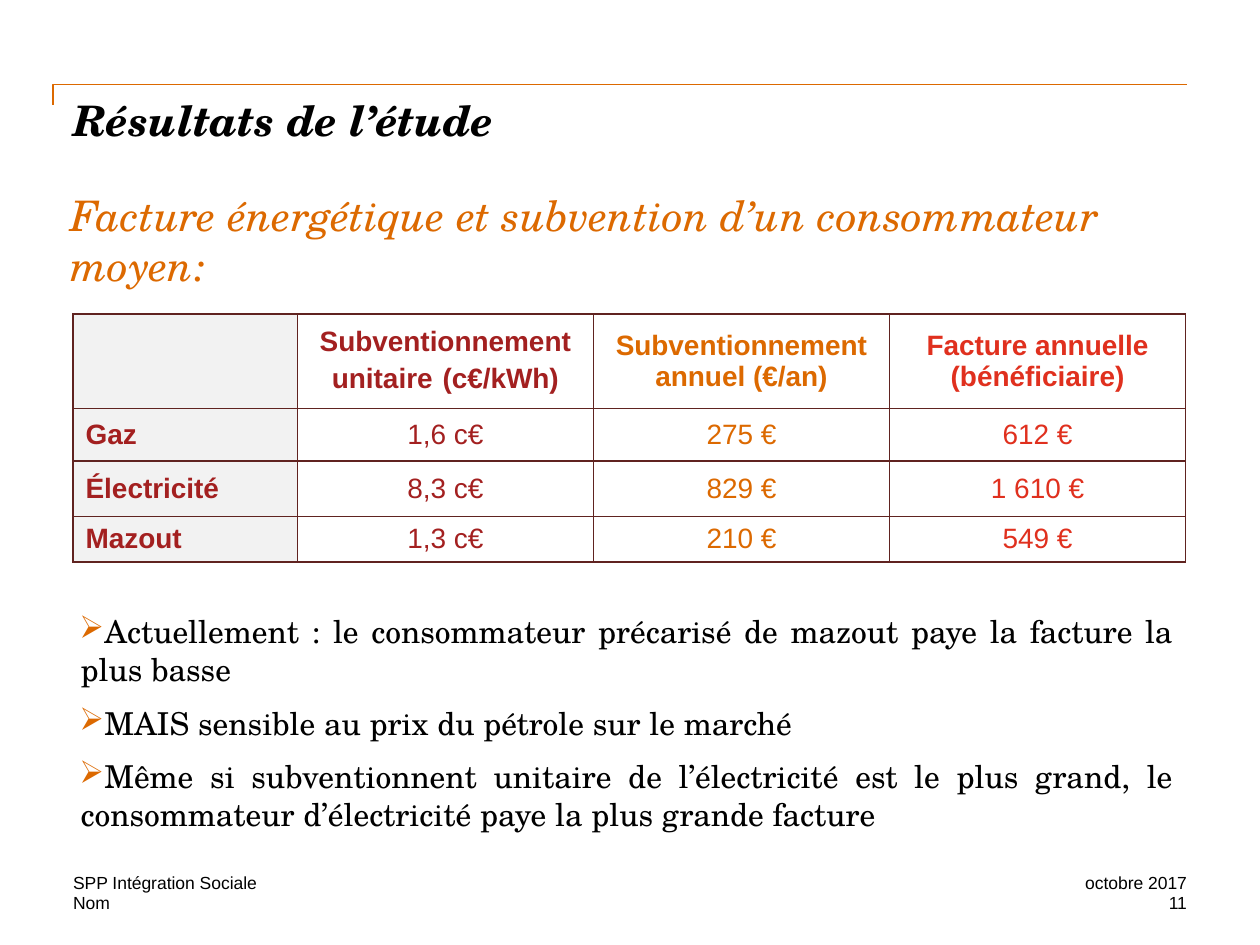
import pptx
import pptx.dml.color
import pptx.enum.text
import pptx.oxml
import pptx.oxml.ns
import pptx.util

Inches, Pt = pptx.util.Inches, pptx.util.Pt
ALIGN, ANCHOR = pptx.enum.text.PP_ALIGN, pptx.enum.text.MSO_ANCHOR
SERIF, SANS = "TeX Gyre Schola", "Arial"
BLACK, ORANGE, MAROON, RED = "000000", "DC6900", "A32020", "E0301E"
BORDER = "602320"


def color(value):
    return pptx.dml.color.RGBColor.from_string(value)


def write(frame, texts, font, size, ink, align=ALIGN.LEFT, bold=False,
          italic=False, margin=0, after=0, anchor=ANCHOR.TOP):
    """Fill a text frame with one paragraph per text, all in one format."""
    frame.word_wrap = True
    frame.auto_size = pptx.enum.text.MSO_AUTO_SIZE.NONE
    frame.vertical_anchor = anchor
    frame.margin_left = frame.margin_right = Inches(margin)
    frame.margin_top = frame.margin_bottom = Inches(margin)
    for index, text in enumerate(texts):
        paragraph = frame.add_paragraph() if index else frame.paragraphs[0]
        paragraph.text = text
        paragraph.alignment = align
        paragraph.space_after = Pt(after)
        paragraph.font.name, paragraph.font.size = font, Pt(size)
        paragraph.font.bold, paragraph.font.italic = bold, italic
        paragraph.font.color.rgb = color(ink)


presentation = pptx.Presentation()
presentation.slide_width, presentation.slide_height = Inches(10), Inches(7.5)
slide = presentation.slides.add_slide(presentation.slide_layouts[5])

# Corner rule above the title
builder = slide.shapes.build_freeform(Inches(0.42), Inches(0.83))
builder.add_line_segments(
    [(Inches(0.42), Inches(0.67)), (Inches(9.42), Inches(0.67))], close=False)
rule = builder.convert_to_shape()
rule.shadow.inherit = False
rule.fill.background()
rule.line.color.rgb = color(ORANGE)
rule.line.width = Pt(1)

# Title and subtitle
title = slide.shapes.title
title.left, title.top = Inches(0.58), Inches(0.75)
title.width, title.height = Inches(8.83), Inches(1)
write(title.text_frame, ["Résultats de l’étude"], SERIF, 24, BLACK,
      bold=True, italic=True)

subtitle = slide.shapes.add_textbox(
    Inches(0.56), Inches(1.5), Inches(8.82), Inches(0.58))
write(subtitle.text_frame,
      ["Facture énergétique et subvention d’un consommateur moyen:"],
      SERIF, 24, ORANGE, italic=True, after=9)

# Table of subsidies and bills
rows = [
    ["", "Subventionnement unitaire", "Subventionnement annuel (€/an)",
     "Facture annuelle (bénéficiaire)"],
    ["Gaz", "1,6 c€", "275 €", "612 €"],
    ["Électricité", "8,3 c€", "829 €", "1 610 €"],
    ["Mazout", "1,3 c€", "210 €", "549 €"],
]
column_widths = [1.78, 2.35, 2.35, 2.35]
row_heights = [0.75, 0.42, 0.44, 0.36]
column_inks = [MAROON, MAROON, ORANGE, RED]
table = slide.shapes.add_table(
    4, 4, Inches(0.58), Inches(2.49),
    Inches(sum(column_widths)), Inches(sum(row_heights))).table
for column, width in zip(table.columns, column_widths):
    column.width = Inches(width)
for row, height in zip(table.rows, row_heights):
    row.height = Inches(height)

for row_index, values in enumerate(rows):
    for column_index, value in enumerate(values):
        cell = table.cell(row_index, column_index)
        cell.vertical_anchor = ANCHOR.MIDDLE
        cell.fill.solid()
        cell.fill.fore_color.rgb = color("FFFFFF" if column_index else "F2F2F2")
        paragraph = cell.text_frame.paragraphs[0]
        # No-break spaces keep each amount with its unit
        paragraph.text = value.replace(" ", "\u00a0") if row_index else value
        paragraph.alignment = ALIGN.CENTER if column_index else ALIGN.LEFT
        paragraph.font.name, paragraph.font.size = SANS, Pt(16)
        paragraph.font.bold = row_index == 0 or column_index == 0
        paragraph.font.color.rgb = color(column_inks[column_index])
        properties = cell._tc.get_or_add_tcPr()
        for position, side in enumerate(("lnL", "lnR", "lnT", "lnB")):
            properties.insert(position, pptx.oxml.parse_xml(
                f'<a:{side} {pptx.oxml.ns.nsdecls("a")} w="12700"><a:solidFill>'
                f'<a:srgbClr val="{BORDER}"/></a:solidFill></a:{side}>'))

# The unit follows a larger space, which opens up the header lines
unit_header = table.cell(0, 1).text_frame.paragraphs[0]
for text, size in ((" ", 20), ("(c€/kWh)", 16)):
    run = unit_header.add_run()
    run.text = text
    run.font.size = Pt(size)

# Conclusions
conclusions = slide.shapes.add_textbox(
    Inches(0.55), Inches(4.78), Inches(8.84), Inches(1.97))
write(conclusions.text_frame, [
    "Actuellement : le consommateur précarisé de mazout paye la facture la "
    "plus basse",
    "MAIS sensible au prix du pétrole sur le marché",
    "Même si subventionnent unitaire de l’électricité est le plus grand, le "
    "consommateur d’électricité paye la plus grande facture",
], SERIF, 18, BLACK, align=ALIGN.JUSTIFY, margin=0.08, after=9)
for paragraph in conclusions.text_frame.paragraphs:
    properties = paragraph._p.get_or_add_pPr()
    properties.set("marL", str(Inches(0.01)))
    properties.set("indent", str(Inches(-0.31)))
    bullet = pptx.oxml.parse_xml(
        f'<a:buClr {pptx.oxml.ns.nsdecls("a")}><a:srgbClr val="{ORANGE}"/></a:buClr>')
    character = pptx.oxml.parse_xml(
        f'<a:buChar {pptx.oxml.ns.nsdecls("a")} char="➢"/>')
    default_font = properties.find(pptx.oxml.ns.qn("a:defRPr"))
    default_font.addprevious(bullet)
    default_font.addprevious(character)

# Footer
footers = [
    ("SPP Intégration Sociale", 0.58, 6.92, 5.75, ALIGN.LEFT, ANCHOR.BOTTOM),
    ("Nom", 0.58, 7.08, 2.83, ALIGN.LEFT, ANCHOR.TOP),
    ("octobre 2017", 7.75, 6.92, 1.67, ALIGN.RIGHT, ANCHOR.TOP),
    ("11", 7.75, 7.08, 1.67, ALIGN.RIGHT, ANCHOR.TOP),
]
for text, left, top, width, align, anchor in footers:
    footer = slide.shapes.add_textbox(
        Inches(left), Inches(top), Inches(width), Inches(0.17))
    write(footer.text_frame, [text], SANS, 10, BLACK, align=align, anchor=anchor)

presentation.save("out.pptx")
